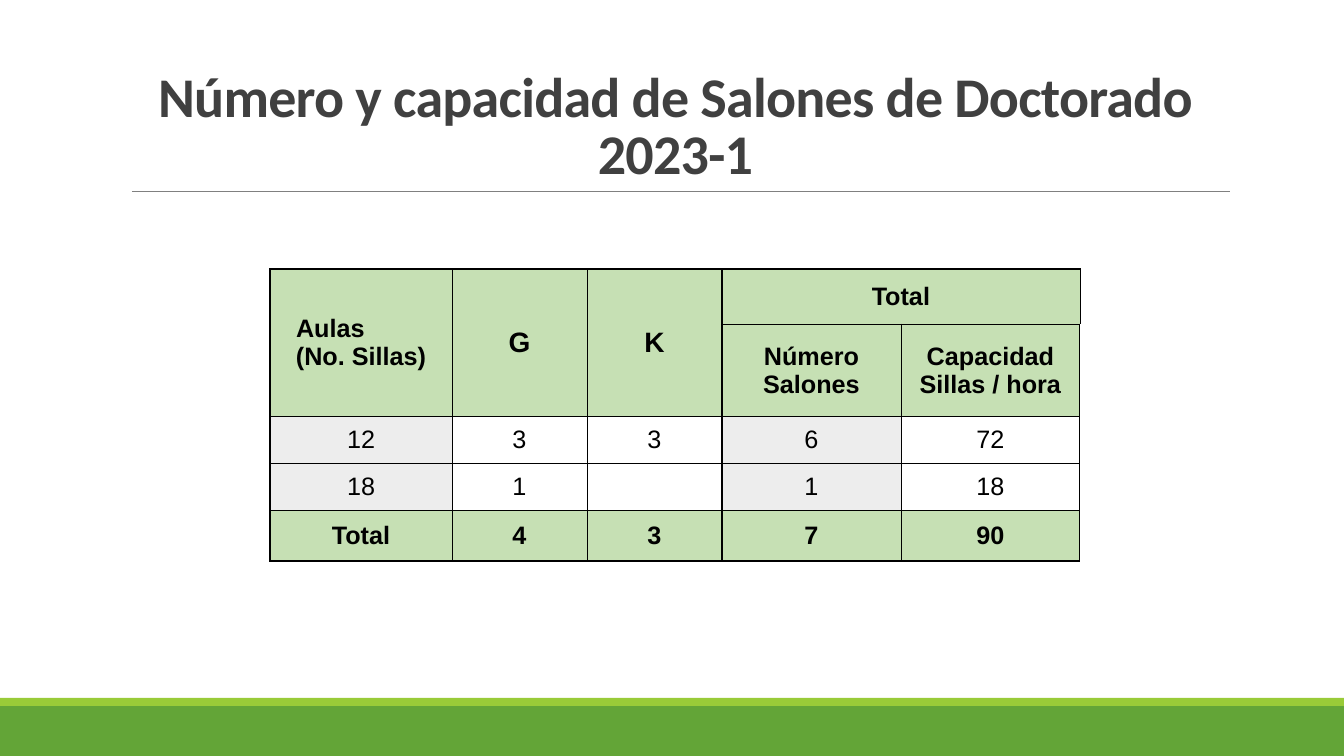
from copy import deepcopy
from dataclasses import dataclass

from lxml import etree
from pptx import Presentation
from pptx.dml.color import RGBColor
from pptx.enum.shapes import MSO_CONNECTOR, MSO_SHAPE
from pptx.enum.text import MSO_ANCHOR, MSO_AUTO_SIZE, PP_ALIGN
from pptx.oxml.ns import qn
from pptx.util import Pt

CENTER, LEFT = PP_ALIGN.CENTER, PP_ALIGN.LEFT
MIDDLE, BOTTOM = MSO_ANCHOR.MIDDLE, MSO_ANCHOR.BOTTOM
RECTANGLE, STRAIGHT = MSO_SHAPE.RECTANGLE, MSO_CONNECTOR.STRAIGHT
NO_FIT = MSO_AUTO_SIZE.NONE
TITLE_ONLY = 5

# Content
TITLE = ["Número y capacidad de Salones de Doctorado", "2023-1"]
ROWS = [
    ["Aulas\n(No. Sillas)", "G", "K", "Total", ""],
    ["", "", "", "Número Salones", "Capacidad Sillas / hora"],
    ["12", "3", "3", "6", "72"],
    ["18", "1", "", "1", "18"],
    ["Total", "4", "3", "7", "90"],
]
MERGES = [((0, 0), (1, 0)), ((0, 1), (1, 1)), ((0, 2), (1, 2)), ((0, 3), (0, 4))]

# Layout in px
PAGE = (1344, 756)
TITLE_BOX = (121, 31, 1109, 160)
RULE = (132, 191, 1230, 191)
BANDS = [((0, 706, 1344, 50), "band"), ((0, 698, 1344, 8), "stripe")]
TABLE_AT = (270, 269)
COLUMN_WIDTHS = [182, 135, 135, 179, 179]
ROW_HEIGHTS = [55, 92, 47, 47, 51]
AULAS_INDENT = 25
BOLD_ROWS = (0, 1, 4)
SHADED_COLUMNS = (0, 3)
HEAVY_COLUMN_EDGES = (0, 3, 5)
HEAVY_ROW_EDGES = (0, 5)


@dataclass(frozen=True)
class Theme:
    band: str = "63A537"
    stripe: str = "99CB38"
    rule: str = "808080"
    title: str = "404040"
    ink: str = "000000"
    header: str = "C6E0B4"
    shade: str = "EDEDED"
    title_font: str = "Calibri"
    table_font: str = "Arial"
    title_size: int = 40
    letter_size: int = 20
    cell_size: int = 18
    thin: float = 0.5
    heavy: float = 1


THEME = Theme()


def px(value):
    return round(value * 914400 / 100.8)


def color(name):
    return RGBColor.from_string(getattr(THEME, name))


def apply(target, **values):
    for name, value in values.items():
        setattr(target, name, value)


def format_font(font, name, size, ink, bold):
    apply(font, name=name, size=Pt(size), bold=bold)
    font.color.rgb = color(ink)


def add_decor(page):
    for place, name in BANDS:
        band = page.shapes.add_shape(RECTANGLE, *map(px, place))
        band.shadow.inherit = False
        band.fill.solid()
        band.fill.fore_color.rgb = color(name)
        band.line.fill.background()
    rule = page.shapes.add_connector(STRAIGHT, *map(px, RULE))
    rule.line.color.rgb = color("rule")
    rule.line.width = Pt(THEME.thin)
    etree.SubElement(rule._element.spPr, qn("a:effectLst"))


def add_title(page):
    box = page.shapes.title
    left, top, width, height = map(px, TITLE_BOX)
    apply(box, left=left, top=top, width=width, height=height)
    apply(box.text_frame, text="\v".join(TITLE), word_wrap=True,
          auto_size=NO_FIT, vertical_anchor=BOTTOM)
    para = box.text_frame.paragraphs[0]
    apply(para, alignment=CENTER, line_spacing=0.85)
    for span in para.runs:
        format_font(span.font, THEME.title_font, THEME.title_size, "title", True)
        span._r.get_or_add_rPr().set("spc", "-50")
    # The line break takes the same size as the text
    for line_break in para._p.findall(qn("a:br")):
        line_break.append(deepcopy(para.runs[0]._r.rPr))


def add_borders(cell, row, column):
    edges = {
        "lnL": column in HEAVY_COLUMN_EDGES,
        "lnR": column + 1 in HEAVY_COLUMN_EDGES,
        "lnT": row in HEAVY_ROW_EDGES,
        "lnB": row + 1 in HEAVY_ROW_EDGES,
    }
    properties = cell._tc.get_or_add_tcPr()
    for position, (tag, heavy) in enumerate(edges.items()):
        width = Pt(THEME.heavy if heavy else THEME.thin)
        line = etree.Element(qn("a:" + tag), w=str(width))
        fill = etree.SubElement(line, qn("a:solidFill"))
        etree.SubElement(fill, qn("a:srgbClr"), val=THEME.ink)
        properties.insert(position, line)


def fill_cell(cell, row, column):
    text = ROWS[row][column]
    bold = row in BOLD_ROWS
    apply(cell, text=text, vertical_anchor=MIDDLE, margin_left=px(1),
          margin_right=px(1), margin_top=px(1), margin_bottom=0)
    size = THEME.letter_size if text in ("G", "K") else THEME.cell_size
    for para in cell.text_frame.paragraphs:
        para.alignment = CENTER
        for span in para.runs:
            format_font(span.font, THEME.table_font, size, "ink", bold)
    if bold or column in SHADED_COLUMNS:
        cell.fill.solid()
        cell.fill.fore_color.rgb = color("header" if bold else "shade")
    else:
        cell.fill.background()
    add_borders(cell, row, column)


def add_room_table(page):
    size = sum(COLUMN_WIDTHS), sum(ROW_HEIGHTS)
    frame = page.shapes.add_table(len(ROW_HEIGHTS), len(COLUMN_WIDTHS),
                                  *map(px, TABLE_AT + size))
    table = frame.table
    apply(table, first_row=False, horz_banding=False)
    for column, width in zip(table.columns, COLUMN_WIDTHS):
        column.width = px(width)
    for row, height in zip(table.rows, ROW_HEIGHTS):
        row.height = px(height)
    for row in range(len(ROW_HEIGHTS)):
        for column in range(len(COLUMN_WIDTHS)):
            fill_cell(table.cell(row, column), row, column)
    for first, last in MERGES:
        table.cell(*first).merge(table.cell(*last))
    # "Aulas" stands at the left, above the centred second line
    aulas = table.cell(0, 0).text_frame.paragraphs[0]
    aulas.alignment = LEFT
    aulas._p.get_or_add_pPr().set("marL", str(px(AULAS_INDENT)))


def main():
    deck = Presentation()
    apply(deck, slide_width=px(PAGE[0]), slide_height=px(PAGE[1]))
    page = deck.slides.add_slide(deck.slide_layouts[TITLE_ONLY])
    add_decor(page)
    add_title(page)
    add_room_table(page)
    deck.save("out.pptx")


if __name__ == "__main__":
    main()
